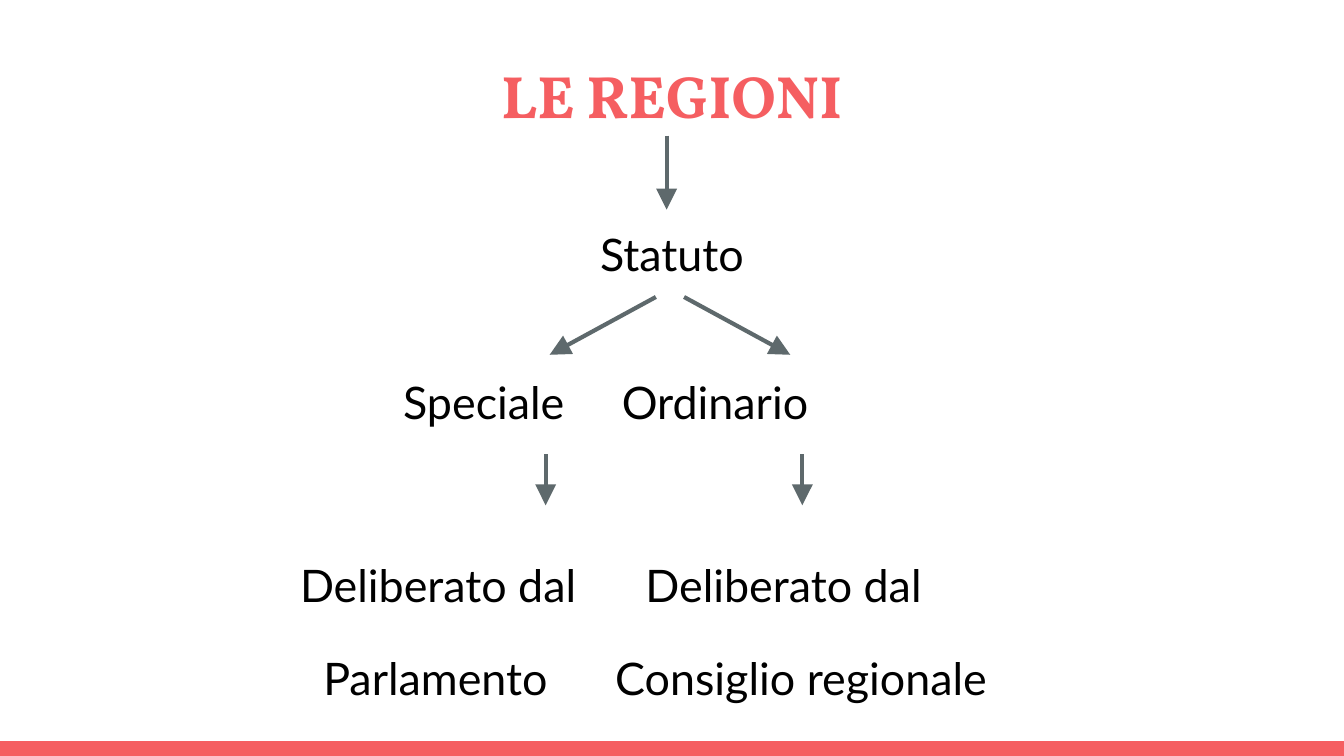
from dataclasses import dataclass
from lxml import etree
from pptx import Presentation
from pptx.dml.color import RGBColor
from pptx.enum.shapes import MSO_CONNECTOR, MSO_SHAPE
from pptx.enum.text import MSO_ANCHOR, MSO_AUTO_SIZE, PP_ALIGN
from pptx.oxml.ns import qn
from pptx.util import Inches, Pt

CENTER = PP_ALIGN.CENTER
TOP = MSO_ANCHOR.TOP
NO_AUTOFIT = MSO_AUTO_SIZE.NONE
STRAIGHT = MSO_CONNECTOR.STRAIGHT
RECTANGLE = MSO_SHAPE.RECTANGLE
TITLE_ONLY = 5


@dataclass(frozen=True)
class Theme:
    background = RGBColor.from_string("FFFFFF")
    accent = RGBColor.from_string("F55E61")
    text = RGBColor.from_string("000000")
    arrow = RGBColor.from_string("5E696C")
    title_font = "Vollkorn"
    body_font = "Lato"
    title_size = Pt(32)
    body_size = Pt(24)
    arrow_width = Pt(2.25)


theme = Theme()


def format_text(frame, margin, name, size, color, bold=False):
    frame.margin_left = frame.margin_right = Inches(margin)
    frame.margin_top = frame.margin_bottom = Inches(margin)
    frame.word_wrap = True
    frame.auto_size = NO_AUTOFIT
    frame.vertical_anchor = TOP
    para = frame.paragraphs[0]
    para.alignment = CENTER
    para.font.name = name
    para.font.size = size
    para.font.color.rgb = color
    para.font.bold = bold


deck = Presentation()
deck.slide_width = Inches(10)
deck.slide_height = deck.slide_width * 9 // 16
page = deck.slides.add_slide(deck.slide_layouts[TITLE_ONLY])
page.background.fill.solid()
page.background.fill.fore_color.rgb = theme.background

bar_height = Inches(0.11)
footer_bar = page.shapes.add_shape(
    RECTANGLE, 0, deck.slide_height - bar_height, deck.slide_width, bar_height
)
footer_bar.shadow.inherit = False
footer_bar.fill.solid()
footer_bar.fill.fore_color.rgb = theme.accent
footer_bar.line.fill.background()

title = page.shapes.title
title.left, title.top = Inches(0.34), Inches(0.34)
title.width, title.height = Inches(9.32), Inches(0.68)
title.text_frame.text = "LE REGIONI"
format_text(title.text_frame, 0.1, theme.title_font, theme.title_size, theme.accent, True)

label_width, label_height = 3, 0.4
labels = [
    ("Statuto", 5, 1.69),
    ("Speciale", 3.6, 2.79),
    ("Ordinario", 5.32, 2.79),
    ("Deliberato dal", 3.26, 4.15),
    ("Parlamento", 3.24, 4.84),
    ("Deliberato dal", 5.83, 4.15),
    ("Consiglio regionale", 5.96, 4.84),
]
for text, center, top in labels:
    box = page.shapes.add_textbox(
        Inches(center - label_width / 2), Inches(top),
        Inches(label_width), Inches(label_height),
    )
    box.text_frame.text = text
    format_text(box.text_frame, 0, theme.body_font, theme.body_size, theme.text)

arrows = [
    (4.88, 2.21, 4.09, 2.64),
    (5.09, 2.21, 5.88, 2.64),
    (4.06, 3.38, 4.06, 3.76),
    (4.96, 1.01, 4.96, 1.56),
    (5.97, 3.38, 5.97, 3.76),
]
for ends in arrows:
    arrow = page.shapes.add_connector(STRAIGHT, *map(Inches, ends))
    arrow.line.color.rgb = theme.arrow
    arrow.line.width = theme.arrow_width
    properties = arrow.element.spPr
    outline = properties.find(qn("a:ln"))
    etree.SubElement(outline, qn("a:tailEnd"), type="triangle", w="lg", len="lg")
    etree.SubElement(properties, qn("a:effectLst"))

deck.save("out.pptx")
